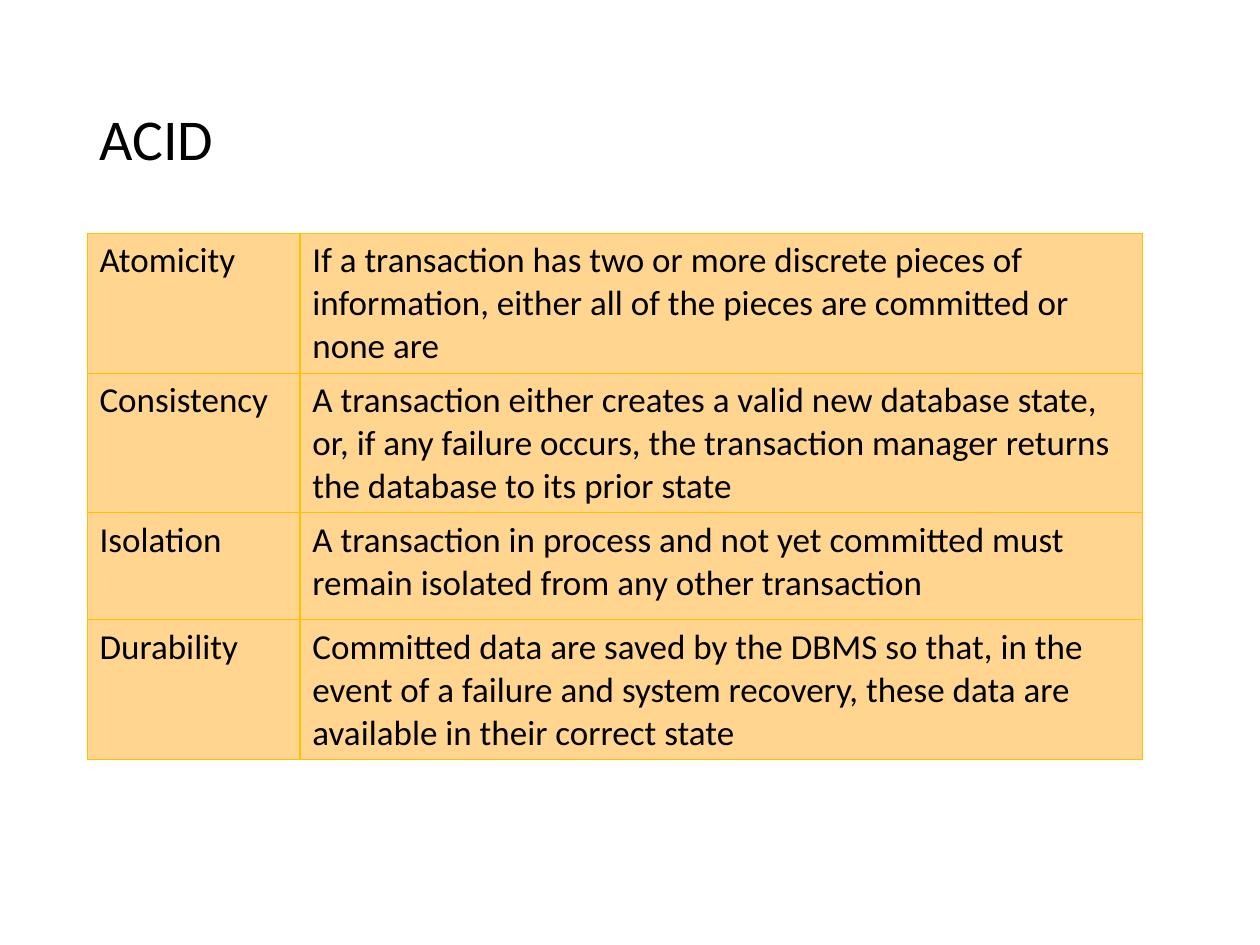
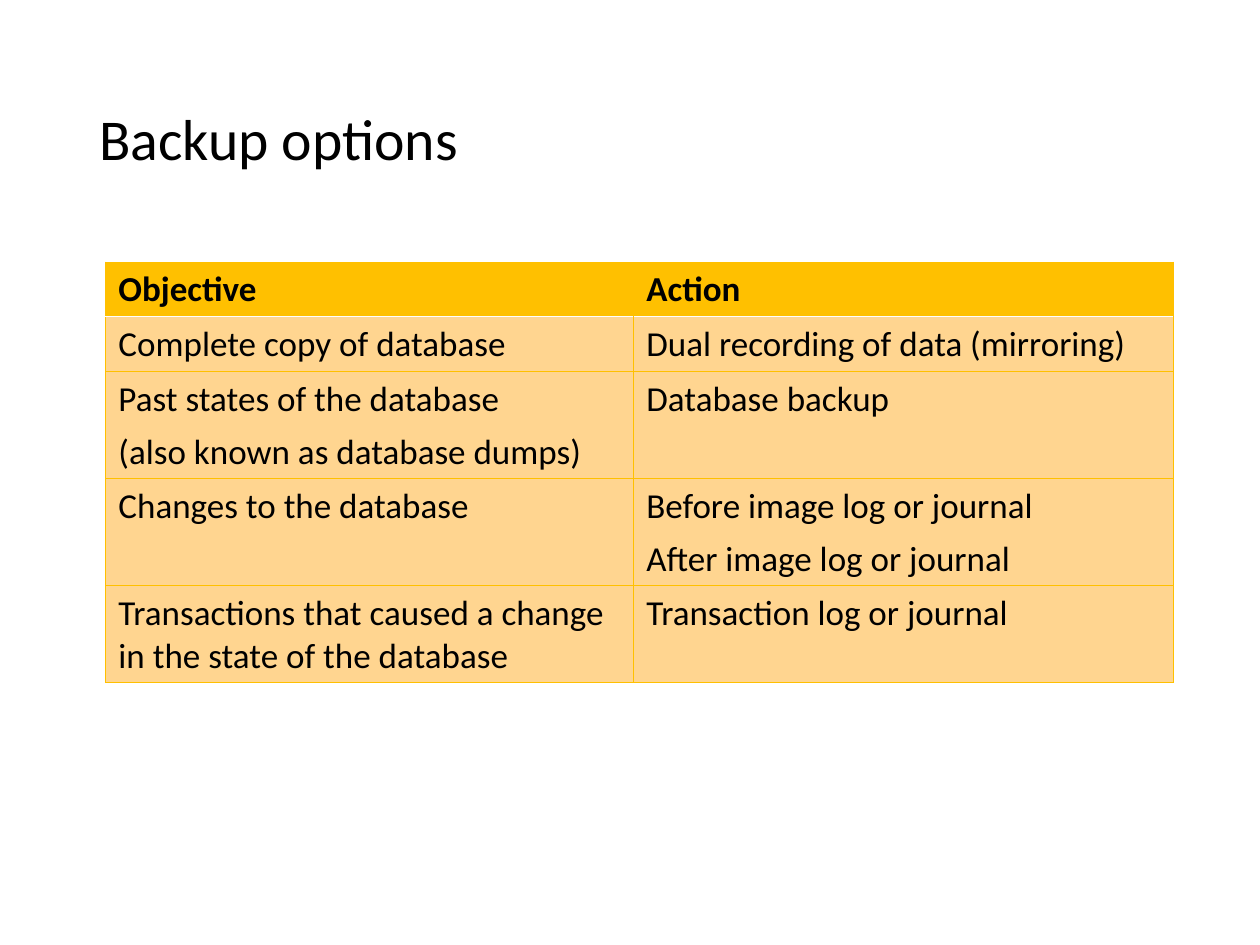
"""Build two slides on database transactions: ACID properties and backup options."""
from dataclasses import dataclass

from lxml.etree import SubElement
from pptx import Presentation
from pptx.dml.color import RGBColor
from pptx.enum.text import MSO_ANCHOR as Anchor
from pptx.oxml.ns import qn
from pptx.util import Inches, Pt

ACID = {
    "title": "ACID",
    "position": (0.69, 1.85),
    "columns": (1.69, 6.69),
    "heights": (1.11, 1.11, 0.85, 1.11),
    "header": False,
    "divider": 1,
    "spacing": {"before": 4},
    "rows": [
        ("Atomicity", "If a transaction has two or more discrete pieces of information, "
         "either all of the pieces are committed or none are"),
        ("Consistency", "A transaction either creates a valid new database state, or, if any "
         "failure occurs, the transaction manager returns the database to its prior state"),
        ("Isolation", "A transaction in process and not yet committed must remain isolated "
         "from any other transaction"),
        ("Durability", "Committed data are saved by the DBMS so that, in the event of a failure "
         "and system recovery, these data are available in their correct state"),
    ],
}
BACKUP = {
    "title": "Backup options",
    "position": (0.84, 2.08),
    "columns": (4.19, 4.28),
    "heights": (0.43, 0.43, 0.85, 0.85, 0.77),
    "header": True,
    "divider": 0.5,
    "spacing": {"before": 3, "after": 3},
    "rows": [
        ("Objective", "Action"),
        ("Complete copy of database", "Dual recording of data (mirroring)"),
        ("Past states of the database\n(also known as database dumps)", "Database backup"),
        ("Changes to the database", "Before image log or journal\nAfter image log or journal"),
        ("Transactions that caused a change in the state of the database",
         "Transaction log or journal"),
    ],
}


@dataclass(frozen=True)
class Theme:
    font: str = "Calibri"
    text: str = "000000"
    accent: str = "FFC000"
    cell: str = "FFD590"
    white: str = "FFFFFF"
    title_size: int = 33
    body_size: int = 20
    hairline: float = 0.5
    header_line: float = 1


THEME = Theme()


def write_text(frame, text, size=THEME.body_size, bold=False, before=0, after=0, line=1.0):
    frame.word_wrap = True
    for index, content in enumerate(text.split("\n")):
        paragraph = frame.paragraphs[0] if index == 0 else frame.add_paragraph()
        paragraph.space_before, paragraph.space_after = Pt(before), Pt(after)
        paragraph.line_spacing = line
        run = paragraph.add_run()
        run.text = content
        run.font.name, run.font.size, run.font.bold = THEME.font, Pt(size), bold
        run.font.color.rgb = RGBColor.from_string(THEME.text)


def style_cell(cell, fill, borders):
    properties = cell._tc.get_or_add_tcPr()
    for side in "LRTB":
        color, width = borders.get(side, (THEME.accent, THEME.hairline))
        line = SubElement(properties, qn(f"a:ln{side}"), w=str(Pt(width)))
        if color:
            solid = SubElement(line, qn("a:solidFill"))
            SubElement(solid, qn("a:srgbClr"), val=color)
        else:
            SubElement(line, qn("a:noFill"))
    cell.fill.solid()
    cell.fill.fore_color.rgb = RGBColor.from_string(fill)


def cell_borders(content, row, column):
    is_header = content["header"] and row == 0
    divider = (None if is_header else THEME.accent, content["divider"])
    borders = {"R" if column == 0 else "L": divider}
    if content["header"] and row < 2:
        borders["B" if is_header else "T"] = (THEME.white, THEME.header_line)
    return borders


def add_title(slide, title):
    box = slide.shapes.add_textbox(Inches(0.69), Inches(0.4), Inches(8.62), Inches(1.45))
    box.text_frame.vertical_anchor = Anchor.MIDDLE
    write_text(box.text_frame, title, size=THEME.title_size, line=0.9)


def add_grid(slide, content):
    rows, columns, heights = content["rows"], content["columns"], content["heights"]
    left, top = content["position"]
    table = slide.shapes.add_table(
        len(rows), len(columns), Inches(left), Inches(top),
        Inches(sum(columns)), Inches(sum(heights))).table
    table.first_row = content["header"]
    table.horz_banding = False
    for column, width in zip(table.columns, columns):
        column.width = Inches(width)
    for row, height in zip(table.rows, heights):
        row.height = Inches(height)
    for row, texts in enumerate(rows):
        is_header = content["header"] and row == 0
        for column, text in enumerate(texts):
            cell = table.cell(row, column)
            style_cell(cell, THEME.accent if is_header else THEME.cell,
                       cell_borders(content, row, column))
            write_text(cell.text_frame, text, bold=is_header, **content["spacing"])


def main():
    presentation = Presentation()
    presentation.slide_width, presentation.slide_height = Inches(10), Inches(7.5)
    for content in (ACID, BACKUP):
        slide = presentation.slides.add_slide(presentation.slide_layouts[6])
        add_title(slide, content["title"])
        add_grid(slide, content)
    presentation.save("out.pptx")


if __name__ == "__main__":
    main()
